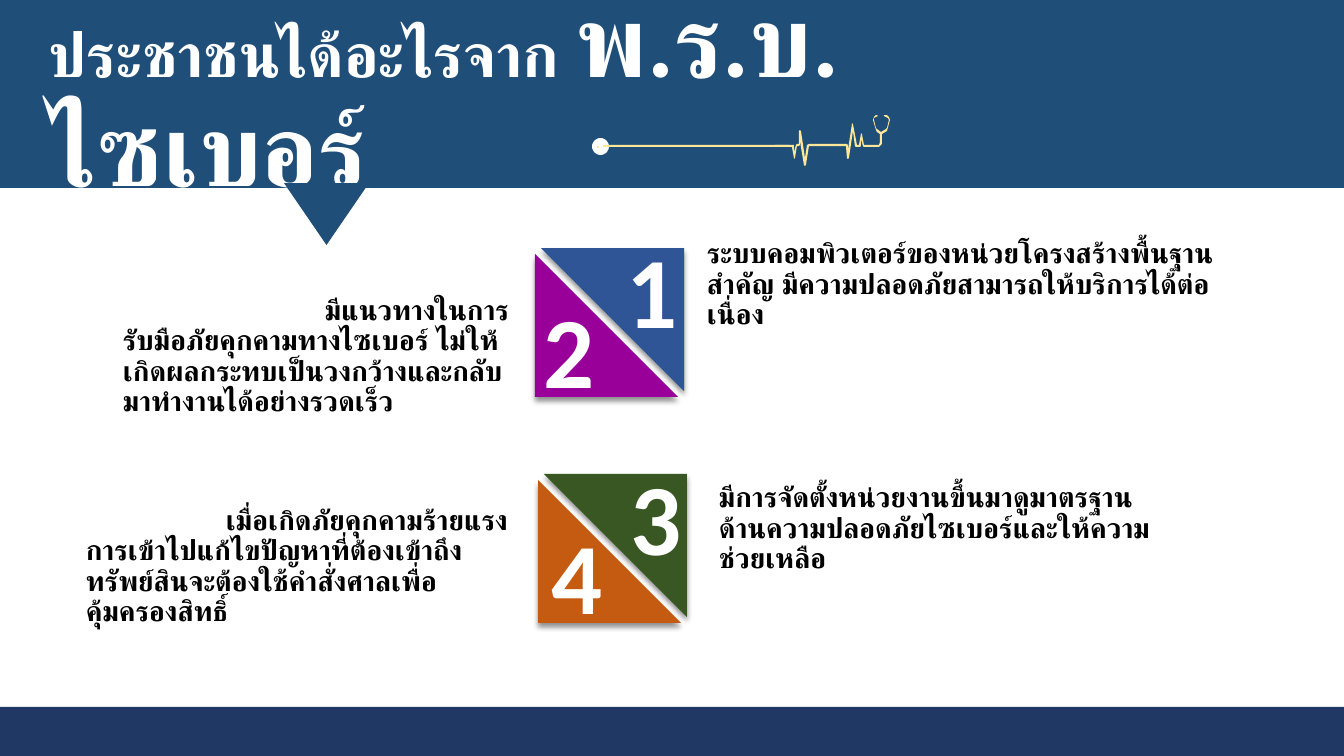
from lxml import etree
from pptx import Presentation
from pptx.dml.color import RGBColor
from pptx.enum.shapes import MSO_SHAPE
from pptx.enum.text import MSO_ANCHOR, MSO_AUTO_SIZE, PP_ALIGN
from pptx.oxml import parse_xml
from pptx.oxml.ns import qn
from pptx.util import Pt

RECTANGLE = MSO_SHAPE.RECTANGLE
ROUNDED = MSO_SHAPE.ROUNDED_RECTANGLE
OVAL = MSO_SHAPE.OVAL
TRIANGLE = MSO_SHAPE.ISOSCELES_TRIANGLE
RIGHT_TRIANGLE = MSO_SHAPE.RIGHT_TRIANGLE
MIDDLE = MSO_ANCHOR.MIDDLE
GROW = MSO_AUTO_SIZE.SHAPE_TO_FIT_TEXT
CENTER = PP_ALIGN.CENTER

EMU_PER_PX = 914400 / 100.8
FONT = "Calibri"
WHITE, BLACK = "FFFFFF", "000000"
HEADER_BLUE, FOOTER_BLUE, PULSE_YELLOW = "1F4E79", "203864", "FFE699"
TILE = 143

# left, top, width, height, first-line indent, text
BENEFITS = [
    (697, 212, 539, 146, 0,
     "ระบบคอมพิวเตอร์ของหน่วยโครงสร้างพื้นฐานสำคัญ มีความปลอดภัยสามารถให้บริการได้ต่อเนื่อง"),
    (113, 284, 415, 146, 202,
     "มีแนวทางในการรับมือภัยคุกคามทางไซเบอร์ ไม่ให้เกิดผลกระทบเป็นวงกว้างและกลับมาทำงานได้อย่างรวดเร็ว"),
    (709, 456, 468, 146, 0,
     "มีการจัดตั้งหน่วยงานขึ้นมาดูมาตรฐานด้านความปลอดภัยไซเบอร์และให้ความช่วยเหลือ"),
    (76, 494, 454, 146, 140,
     "เมื่อเกิดภัยคุกคามร้ายแรงการเข้าไปแก้ไขปัญหาที่ต้องเข้าถึงทรัพย์สินจะต้องใช้คำสั่งศาลเพื่อคุ้มครองสิทธิ์"),
]

# left, top, rotation, colour
TILES = [
    (535, 254, 0, "990099"), (541, 248, 180, "2F5597"),
    (538, 480, 0, "C55A11"), (544, 474, 180, "385723"),
]
NUMBERS = [("1", 615, 223), ("2", 532, 283), ("3", 619, 450), ("4", 540, 509)]

STETHOSCOPE_LEFT, STETHOSCOPE_TOP = 775, 115
STETHOSCOPE = [
    (115, 5), (114, 2), (112, 0), (109, 0), (109, 1), (111, 2), (113, 3), (114, 5),
    (112, 13), (111, 14), (106, 17), (102, 14), (101, 13), (99, 5), (99, 3), (101, 2),
    (103, 1), (102, 0), (101, 0), (99, 2), (98, 5), (101, 15), (102, 17), (105, 19),
    (105, 27), (104, 30), (89, 30), (87, 19), (86, 18), (86, 19), (84, 30), (82, 30),
    (78, 9), (77, 8), (77, 9), (73, 35), (73, 30), (72, 29), (34, 29), (32, 30),
    (30, 43), (26, 16), (25, 15), (24, 16), (24, 29), (22, 29), (21, 30), (19, 37),
    (19, 30), (0, 30), (0, 32), (17, 32), (19, 43), (19, 44), (20, 43), (22, 31),
    (24, 31), (25, 30), (25, 26), (29, 50), (30, 51), (31, 50), (34, 31), (71, 31),
    (72, 43), (73, 44), (74, 43), (78, 16), (80, 31), (81, 32), (85, 32), (86, 31),
    (86, 24), (88, 31), (89, 32), (104, 32), (107, 29), (107, 19), (112, 16),
]


def px(length):
    return round(length * EMU_PER_PX)


def color(hex_string):
    return RGBColor.from_string(hex_string)


def paint(shape, fill):
    """Give a shape a flat fill with no outline and no shadow."""
    shape.shadow.inherit = False
    shape.fill.solid()
    shape.fill.fore_color.rgb = color(fill)
    shape.line.fill.background()


def add_block(slide, kind, left, top, width, height, fill, rotation=0):
    shape = slide.shapes.add_shape(kind, px(left), px(top), px(width), px(height))
    shape.rotation = rotation
    paint(shape, fill)
    return shape


def add_drop_shadow(shape):
    effects = shape._element.spPr.find(qn("a:effectLst"))
    shadow = etree.SubElement(effects, qn("a:outerShdw"), blurRad=str(Pt(4)),
                              dist=str(Pt(3)), dir="5400000", algn="t", rotWithShape="0")
    black = etree.SubElement(shadow, qn("a:srgbClr"), val=BLACK)
    etree.SubElement(black, qn("a:alpha"), val="43000")


def add_text(slide, left, top, width, height, runs, ink):
    """Add a wrapped text box of (text, size) runs and return its frame."""
    box = slide.shapes.add_textbox(px(left), px(top), px(width), px(height))
    frame = box.text_frame
    frame.word_wrap = True
    for text, size in runs:
        run = frame.paragraphs[0].add_run()
        run.text = text
        run.font.name = FONT
        run.font.size = Pt(size)
        run.font.bold = True
        run.font.color.rgb = color(ink)
    return frame


def add_body(slide, left, top, width, height, runs, ink, indent=0):
    frame = add_text(slide, left, top, width, height, runs, ink)
    frame.vertical_anchor = MIDDLE
    paragraph = frame.paragraphs[0]
    paragraph.line_spacing = 0.9
    if indent:
        paragraph._p.get_or_add_pPr().set("indent", str(px(indent)))


def add_number(slide, digit, left, top):
    frame = add_text(slide, left, top, 67, 132, [(digit, 72)], WHITE)
    frame.margin_left = frame.margin_right = px(12)
    frame.auto_size = GROW
    frame.paragraphs[0].alignment = CENTER


def add_pulse_line(slide):
    """Draw the heartbeat line that ends in a stethoscope."""
    points = [(px(STETHOSCOPE_LEFT + x), px(STETHOSCOPE_TOP + y)) for x, y in STETHOSCOPE]
    builder = slide.shapes.build_freeform(*points[0])
    builder.add_line_segments(points[1:], close=True)
    paint(builder.convert_to_shape(), PULSE_YELLOW)
    dot = add_block(slide, OVAL, 598, 144, 5, 5, PULSE_YELLOW)
    dot.line.color.rgb = color(WHITE)
    dot.line.width = Pt(8.57)
    add_block(slide, ROUNDED, 597, 146, 2, 2, PULSE_YELLOW).adjustments[0] = 0.5
    add_block(slide, RECTANGLE, 603, 145, 186, 2, PULSE_YELLOW)


def main():
    presentation = Presentation()
    presentation.slide_width, presentation.slide_height = px(1344), px(756)
    slide = presentation.slides.add_slide(presentation.slide_layouts[6])

    add_block(slide, RECTANGLE, 0, 0, 1344, 188, HEADER_BLUE)
    title = [("ประชาชนได้อะไรจาก ", 44), ("พ.ร.บ. ไซเบอร์", 72)]
    add_body(slide, 39, 26, 887, 146, title, WHITE)
    for left, top, width, height, indent, text in BENEFITS:
        add_body(slide, left, top, width, height, [(text, 20)], BLACK, indent)
    for left, top, rotation, fill in TILES:
        add_drop_shadow(add_block(slide, RIGHT_TRIANGLE, left, top, TILE, TILE, fill, rotation))
    for digit, left, top in NUMBERS:
        add_number(slide, digit, left, top)
    add_pulse_line(slide)
    add_block(slide, TRIANGLE, 284, 183, 85, 62, HEADER_BLUE, 180)
    add_block(slide, RECTANGLE, 0, 707, 1344, 49, FOOTER_BLUE)
    presentation.save("out.pptx")


if __name__ == "__main__":
    main()
